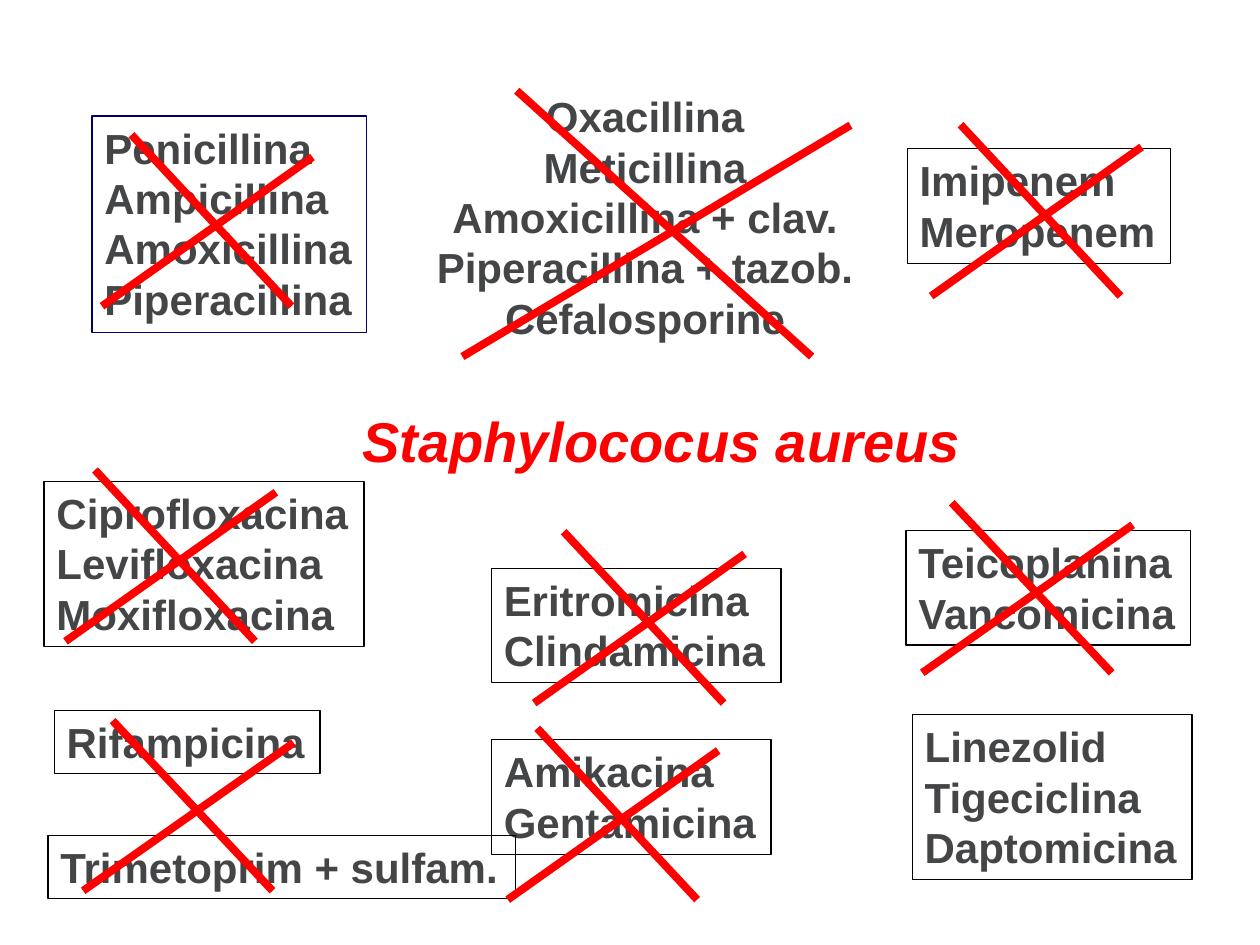
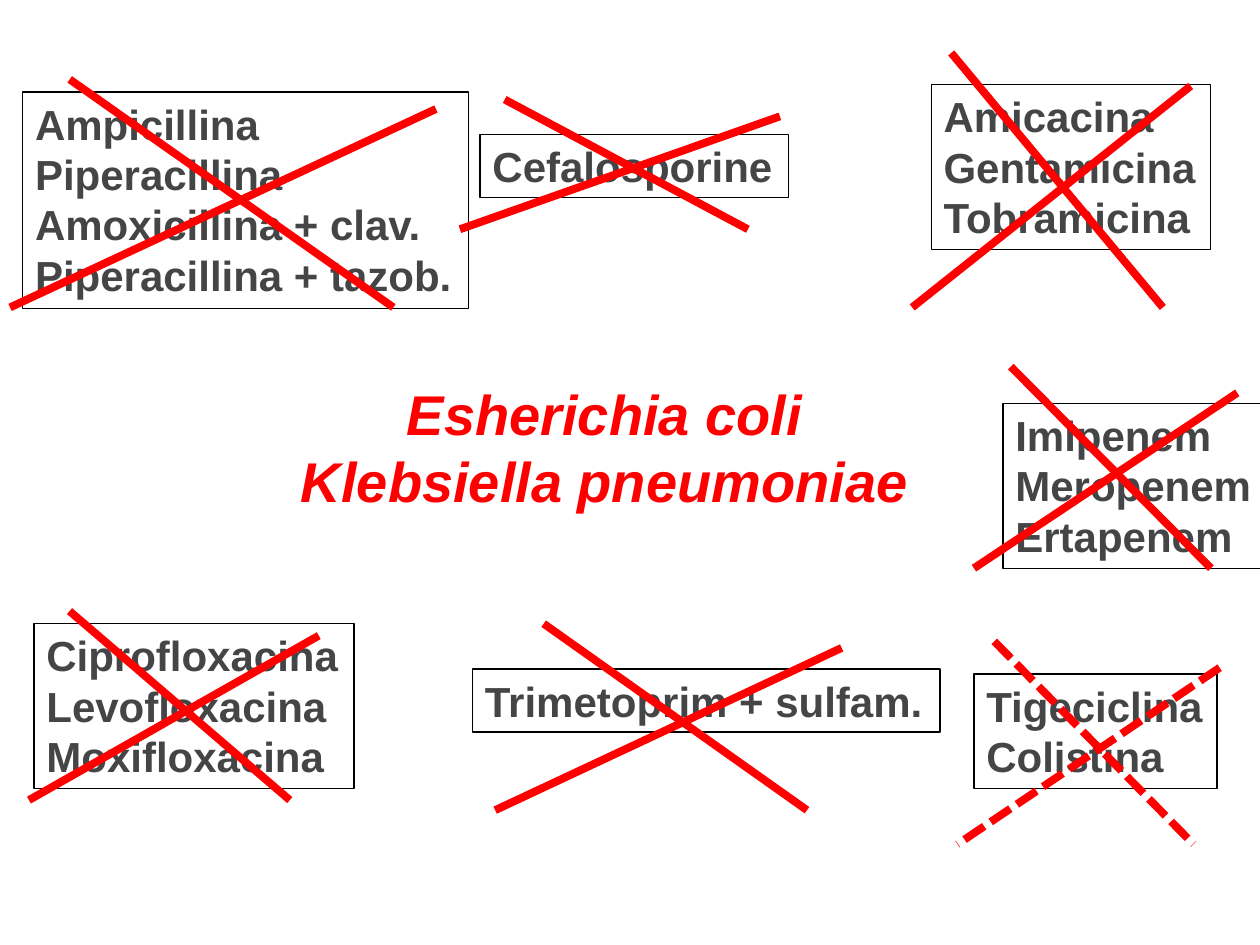
from dataclasses import dataclass

from lxml.etree import SubElement
from pptx import Presentation
from pptx.dml.color import RGBColor
from pptx.enum.dml import MSO_LINE
from pptx.enum.shapes import MSO_CONNECTOR, MSO_SHAPE
from pptx.enum.text import MSO_ANCHOR, MSO_AUTO_SIZE, PP_ALIGN
from pptx.oxml.ns import qn
from pptx.slide import Slide
from pptx.util import Emu, Pt


@dataclass(frozen=True)
class Theme:
    font: str = "Arial"
    drug_size: int = 24
    organism_size: int = 32
    drug_color: str = "444547"
    organism_color: str = "FF0000"
    cross_color: str = "FF0000"
    border_color: str = "000000"
    accent_border_color: str = "000066"
    border_width: float = 0.75
    cross_width: float = 4.5
    line_px_per_point: float = 1.685
    padding_px: int = 10


THEME = Theme()
EMU_PER_PX = 9144
SLIDE_WIDTH, SLIDE_HEIGHT = 1000, 750


@dataclass(frozen=True)
class Label:
    left: int
    top: int
    width: int
    lines: tuple[str, ...]
    centered: bool = False
    border: str | None = THEME.border_color
    size: int = THEME.drug_size
    color: str = THEME.drug_color
    italic: bool = False

    @property
    def height(self) -> int:
        return round(THEME.padding_px + len(self.lines) * self.size * THEME.line_px_per_point)


@dataclass(frozen=True)
class Cross:
    left: int
    top: int
    right: int
    bottom: int
    dashed: bool = False


@dataclass(frozen=True)
class Panel:
    labels: tuple[Label, ...]
    crosses: tuple[Cross, ...]


def organism(left: int, top: int, width: int, lines: tuple[str, ...]) -> Label:
    return Label(left, top, width, lines, centered=True, border=None,
                 size=THEME.organism_size, color=THEME.organism_color, italic=True)


STAPHYLOCOCCUS = Panel(
    labels=(
        organism(276, 318, 498, ("Staphylococus aureus",)),
        Label(73, 92, 218, ("Penicillina", "Ampicillina", "Amoxicillina", "Piperacillina"),
              border=THEME.accent_border_color),
        Label(35, 382, 254, ("Ciprofloxacina", "Levifloxacina", "Moxifloxacina")),
        Label(335, 67, 354, ("Oxacillina", "Meticillina", "Amoxicillina + clav.",
                             "Piperacillina + tazob.", "Cefalosporine"),
              centered=True, border=None),
        Label(720, 118, 209, ("Imipenem", "Meropenem")),
        Label(43, 564, 211, ("Rifampicina",)),
        Label(390, 451, 230, ("Eritromicina", "Clindamicina")),
        Label(390, 587, 222, ("Amikacina", "Gentamicina")),
        Label(719, 421, 226, ("Teicoplanina", "Vancomicina")),
        Label(38, 663, 371, ("Trimetoprim + sulfam.",)),
        Label(724, 567, 222, ("Linezolid", "Tigeciclina", "Daptomicina")),
    ),
    crosses=(
        Cross(81, 107, 248, 243),
        Cross(367, 72, 675, 283),
        Cross(739, 99, 906, 235),
        Cross(52, 373, 219, 509),
        Cross(424, 422, 591, 558),
        Cross(66, 572, 233, 707),
        Cross(403, 578, 570, 714),
        Cross(732, 399, 899, 534),
    ),
)

ENTEROBACTERIA = Panel(
    labels=(
        organism(227, 296, 506, ("Esherichia coli", "Klebsiella pneumoniae")),
        Label(18, 73, 354, ("Ampicillina", "Piperacillina", "Amoxicillina + clav.",
                            "Piperacillina + tazob.")),
        Label(27, 495, 254, ("Ciprofloxacina", "Levofloxacina", "Moxifloxacina")),
        Label(381, 107, 245, ("Cefalosporine",)),
        Label(796, 320, 209, ("Imipenem", "Meropenem", "Ertapenem")),
        Label(375, 531, 371, ("Trimetoprim + sulfam.",)),
        Label(739, 67, 222, ("Amicacina", "Gentamicina", "Tobramicina")),
        Label(773, 535, 193, ("Tigeciclina", "Colistina")),
    ),
    crosses=(
        Cross(8, 63, 346, 244),
        Cross(23, 485, 253, 635),
        Cross(365, 79, 619, 182),
        Cross(393, 495, 668, 643),
        Cross(724, 42, 945, 244),
        Cross(773, 291, 982, 451),
        Cross(760, 509, 968, 670, dashed=True),
    ),
)


def px(length: float) -> Emu:
    """Turn a length in px into EMU."""
    return Emu(round(length * EMU_PER_PX))


def draw_label(slide: Slide, label: Label) -> None:
    """Draw a list of names, framed when the label has a border."""
    bounds = (px(label.left), px(label.top), px(label.width), px(label.height))
    if label.border:
        shape = slide.shapes.add_shape(MSO_SHAPE.RECTANGLE, *bounds)
        shape.shadow.inherit = False
        shape.fill.background()
        shape.line.color.rgb = RGBColor.from_string(label.border)
        shape.line.width = Pt(THEME.border_width)
    else:
        shape = slide.shapes.add_textbox(*bounds)
    text_frame = shape.text_frame
    text_frame.text = "\n".join(label.lines)
    text_frame.word_wrap = False
    text_frame.auto_size = MSO_AUTO_SIZE.SHAPE_TO_FIT_TEXT
    text_frame.vertical_anchor = MSO_ANCHOR.TOP
    for paragraph in text_frame.paragraphs:
        paragraph.alignment = PP_ALIGN.CENTER if label.centered else PP_ALIGN.LEFT
        for run in paragraph.runs:
            run.font.name = THEME.font
            run.font.size = Pt(label.size)
            run.font.bold = True
            run.font.italic = label.italic
            run.font.color.rgb = RGBColor.from_string(label.color)


def draw_cross(slide: Slide, cross: Cross) -> None:
    """Draw a grouped pair of strokes with fixed proportions inside the cross bounds."""
    width, height = cross.right - cross.left, cross.bottom - cross.top
    rising = (cross.right, cross.top + 0.13 * height, cross.left, cross.bottom)
    falling = (cross.left + 0.14 * width, cross.top, cross.left + 0.9 * width, cross.bottom)
    group = slide.shapes.add_group_shape()
    for stroke in (rising, falling):
        connector = group.shapes.add_connector(MSO_CONNECTOR.STRAIGHT, *map(px, stroke))
        connector.line.color.rgb = RGBColor.from_string(THEME.cross_color)
        connector.line.width = Pt(THEME.cross_width)
        if cross.dashed:
            connector.line.dash_style = MSO_LINE.SQUARE_DOT
        SubElement(connector._element.spPr, qn("a:effectLst"))


def draw_panel(presentation: Presentation, panel: Panel) -> None:
    """Add one blank slide and draw the panel's labels and crosses."""
    slide = presentation.slides.add_slide(presentation.slide_layouts[6])
    for label in panel.labels:
        draw_label(slide, label)
    for cross in panel.crosses:
        draw_cross(slide, cross)


def main() -> None:
    """Build and save the presentation."""
    presentation = Presentation()
    presentation.slide_width = px(SLIDE_WIDTH)
    presentation.slide_height = px(SLIDE_HEIGHT)
    for panel in (STAPHYLOCOCCUS, ENTEROBACTERIA):
        draw_panel(presentation, panel)
    presentation.save("out.pptx")


if __name__ == "__main__":
    main()
